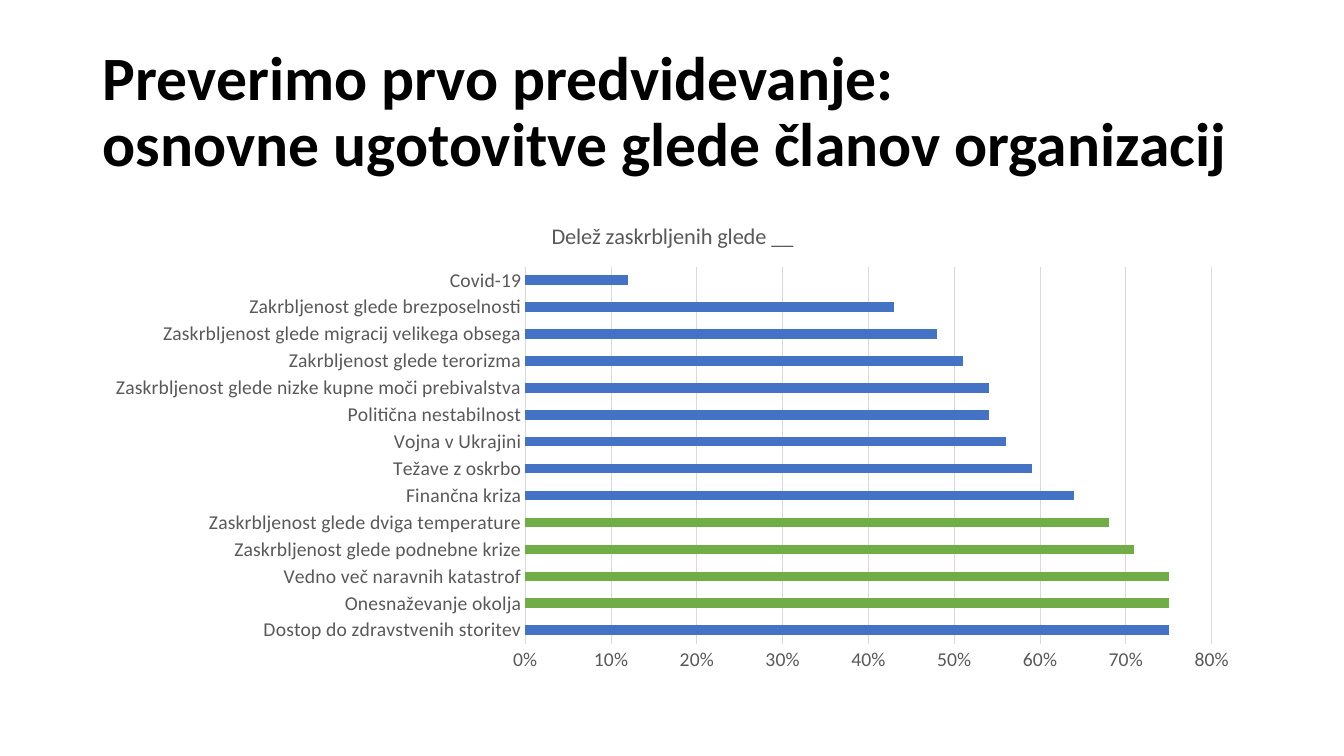
from pptx import Presentation
from pptx.chart.data import CategoryChartData
from pptx.dml.color import RGBColor
from pptx.enum.chart import XL_CHART_TYPE as CT, XL_TICK_MARK as TM
from pptx.enum.text import MSO_ANCHOR as ANCHOR, MSO_AUTO_SIZE as AUTOSIZE, PP_ALIGN as ALIGN
from pptx.util import Inches, Pt

CONCERNS = [
    ("Dostop do zdravstvenih storitev", 0.75),
    ("Onesnaževanje okolja", 0.75),
    ("Vedno več naravnih katastrof", 0.75),
    ("Zaskrbljenost glede podnebne krize", 0.71),
    ("Zaskrbljenost glede dviga temperature", 0.68),
    ("Finančna kriza", 0.64),
    ("Težave z oskrbo", 0.59),
    ("Vojna v Ukrajini", 0.56),
    ("Politična nestabilnost", 0.54),
    ("Zaskrbljenost glede nizke kupne moči prebivalstva", 0.54),
    ("Zakrbljenost glede terorizma", 0.51),
    ("Zaskrbljenost glede migracij velikega obsega", 0.48),
    ("Zakrbljenost glede brezposelnosti", 0.43),
    ("Covid-19", 0.12),
]
ENVIRONMENTAL = range(1, 5)


def rgb(value):
    return RGBColor.from_string(value)


def assign(target, values):
    for name, value in values.items():
        setattr(target, name, value)


class SlideBuilder:
    """Holds the deck style and the slide being filled."""

    font = "Calibri"
    black, grey, rule = "000000", "595959", "D9D9D9"
    blue, green = "4472C4", "70AD47"

    def __init__(self, prs):
        self.slide = prs.slides.add_slide(prs.slide_layouts[5])

    def style(self, font, size, color, bold=False):
        assign(font, {"name": self.font, "size": Pt(size), "bold": bold})
        font.color.rgb = rgb(color)

    def line(self, fmt):
        fmt.line.width = Pt(0.75)
        fmt.line.color.rgb = rgb(self.rule)

    def title(self, text, left, top, width, height):
        sp = self.slide.shapes.title
        assign(sp, {"left": Inches(left), "top": Inches(top),
                    "width": Inches(width), "height": Inches(height)})
        tf = sp.text_frame
        assign(tf, {"word_wrap": True, "auto_size": AUTOSIZE.NONE,
                    "vertical_anchor": ANCHOR.MIDDLE})
        tf.text = text
        p = tf.paragraphs[0]
        assign(p, {"alignment": ALIGN.LEFT, "line_spacing": 0.9})
        for r in p.runs:
            self.style(r.font, 44, self.black, True)

    def bar_chart(self, heading, rows, highlighted, *box):
        data = CategoryChartData(number_format="0%")
        data.categories = [label for label, _ in rows]
        data.add_series("Series 1", [share for _, share in rows])
        chart = self.slide.shapes.add_chart(
            CT.BAR_CLUSTERED, *map(Inches, box), data).chart
        self.style(chart.font, 14, self.black)
        assign(chart, {"has_legend": False, "has_title": True})
        tf = chart.chart_title.text_frame
        tf.text = heading
        self.style(tf.paragraphs[0].runs[0].font, 16, self.grey)
        chart.chart_title.include_in_layout = False

        for axis in (chart.category_axis, chart.value_axis):
            assign(axis, {"major_tick_mark": TM.NONE, "minor_tick_mark": TM.NONE})
            self.style(axis.tick_labels.font, 14, self.grey)
        chart.category_axis.has_major_gridlines = False
        self.line(chart.category_axis.format)
        assign(chart.value_axis, {"minimum_scale": 0, "maximum_scale": 0.8,
                                  "major_unit": 0.1, "has_major_gridlines": True})
        assign(chart.value_axis.tick_labels,
               {"number_format": "0%", "number_format_is_linked": False})
        chart.value_axis.format.line.fill.background()
        self.line(chart.value_axis.major_gridlines.format)

        plot = chart.plots[0]
        assign(plot, {"gap_width": 182, "vary_by_categories": False})
        series = plot.series[0]
        series.invert_if_negative = False
        self.fill(series, self.blue)
        for i in highlighted:
            self.fill(series.points[i], self.green)

    def fill(self, item, color):
        item.format.fill.solid()
        item.format.fill.fore_color.rgb = rgb(color)


def main():
    prs = Presentation()
    assign(prs, {"slide_width": Inches(13.33), "slide_height": Inches(7.5)})
    s = SlideBuilder(prs)
    s.title("Preverimo prvo predvidevanje:\vosnovne ugotovitve glede članov organizacij",
            0.92, 0.4, 11.5, 1.45)
    s.bar_chart("Delež zaskrbljenih glede __", CONCERNS, ENVIRONMENTAL,
                0.92, 2, 11.5, 4.76)
    prs.save("out.pptx")


if __name__ == "__main__":
    main()
